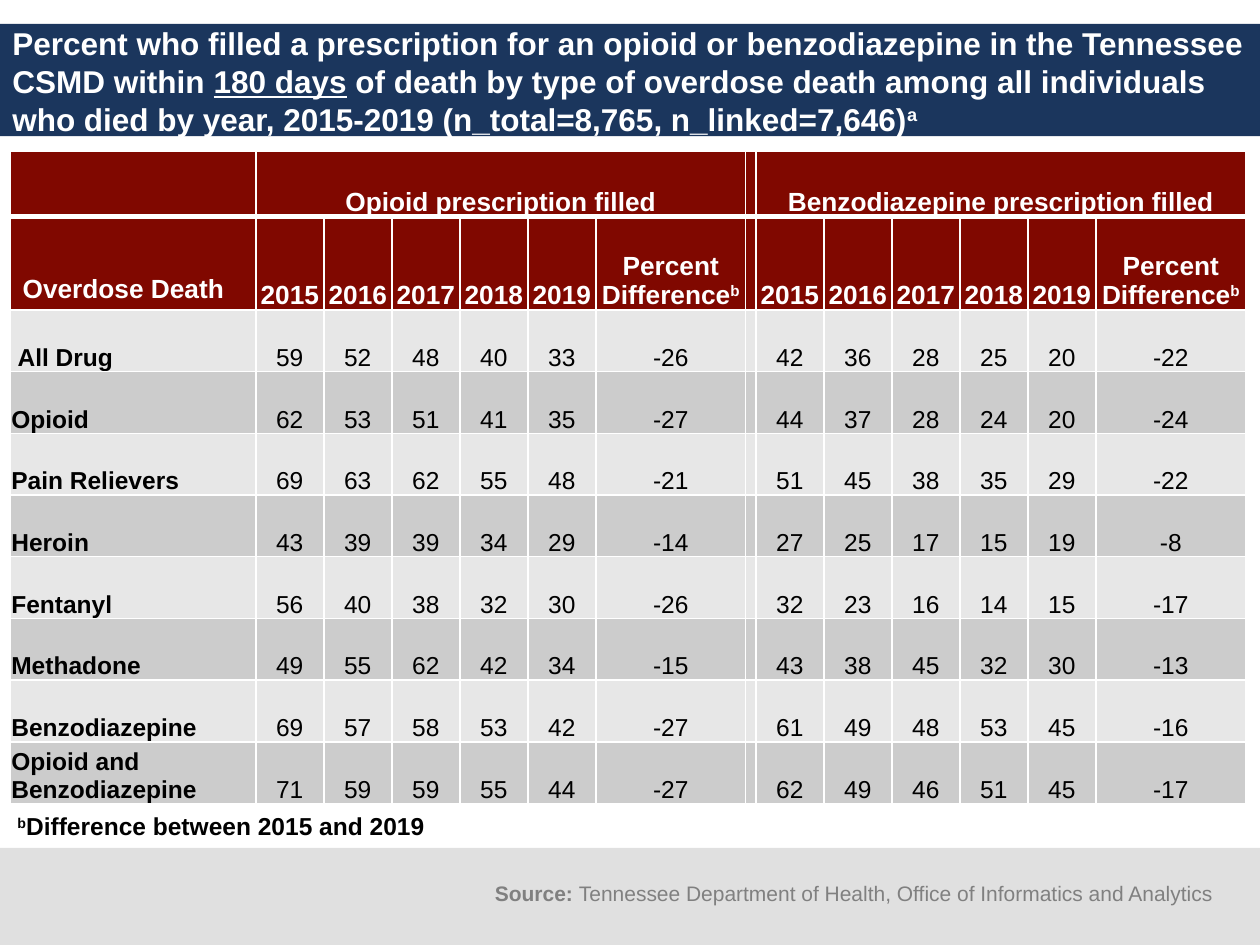
from lxml.etree import SubElement as Sub
from pptx import Presentation
from pptx.dml.color import RGBColor as Rgb
from pptx.enum.shapes import MSO_SHAPE as Shape
from pptx.enum.text import MSO_ANCHOR as Anchor, PP_ALIGN as Align
from pptx.oxml.ns import qn
from pptx.util import Inches, Pt

NAVY, RED, WHITE, BLACK = "1B365D", "800800", "FFFFFF", "000000"
PALE, MID, GREY = "E7E7E7", "CCCCCC", "808080"

TITLE = [
    ("Percent who filled a prescription for an opioid or benzodiazepine in the Tennessee CSMD within ", ""),
    ("180 days", "under"),
    (" of death by type of overdose death among all individuals who died by year, 2015-2019 (n_total=8,765, n_linked=7,646)", ""),
    ("a", "super"),
]
NOTE = [("b", "super"), ("Difference between 2015 and 2019", "")]
SOURCE = [("Source: ", "bold"), ("Tennessee Department of Health, Office of Informatics and Analytics", "")]
GROUPS = ["Opioid prescription filled", "Benzodiazepine prescription filled"]
HEADS = ["2015", "2016", "2017", "2018", "2019", [("Percent Difference", ""), ("b", "super")]]
DEATHS = [
    ("All Drug", [59, 52, 48, 40, 33, -26], [42, 36, 28, 25, 20, -22]),
    ("Opioid", [62, 53, 51, 41, 35, -27], [44, 37, 28, 24, 20, -24]),
    ("Pain Relievers", [69, 63, 62, 55, 48, -21], [51, 45, 38, 35, 29, -22]),
    ("Heroin", [43, 39, 39, 34, 29, -14], [27, 25, 17, 15, 19, -8]),
    ("Fentanyl", [56, 40, 38, 32, 30, -26], [32, 23, 16, 14, 15, -17]),
    ("Methadone", [49, 55, 62, 42, 34, -15], [43, 38, 45, 32, 30, -13]),
    ("Benzodiazepine", [69, 57, 58, 53, 42, -27], [61, 49, 48, 53, 45, -16]),
    ("Opioid and Benzodiazepine", [71, 59, 59, 55, 44, -27], [62, 49, 46, 51, 45, -17]),
]
SPAN = [0.54] * 5 + [1.19]
COLS = [1.95] + SPAN + [0.08] + SPAN
ROWS = [0.52, 0.74] + [0.49] * len(DEATHS)


def write(frame, text, size=14, color=BLACK, bold=False, align=Align.LEFT):
    para = frame.paragraphs[0]
    para.alignment = align
    for part, style in [(text, "")] if isinstance(text, str) else text:
        run = para.add_run()
        run.text = part
        font = run.font
        font.name, font.size = "Arial", Pt(size)
        font.bold = bold or style == "bold"
        font.color.rgb = Rgb.from_string(color)
        if style == "under":
            font.underline = True
        if style == "super":
            run._r.get_or_add_rPr().set("baseline", "30000")


def band(slide, top, high, color):
    bar = slide.shapes.add_shape(Shape.RECTANGLE, 0, Inches(top), Inches(10), Inches(high))
    bar.shadow.inherit = False
    bar.fill.solid()
    bar.fill.fore_color.rgb = Rgb.from_string(color)
    bar.line.fill.background()


def label(slide, box, text, wrap=True, anchor=Anchor.TOP, **form):
    frame = slide.shapes.add_textbox(*map(Inches, box)).text_frame
    frame.word_wrap = wrap
    frame.vertical_anchor = anchor
    write(frame, text, **form)


def dress(cell, color, above, below):
    props = cell._tc.get_or_add_tcPr()
    for side, width in zip("LRTB", (1, 1, above, below)):
        line = Sub(props, qn("a:ln" + side), w=str(Pt(width)))
        Sub(Sub(line, qn("a:solidFill")), qn("a:srgbClr"), val=WHITE)
    cell.fill.solid()
    cell.fill.fore_color.rgb = Rgb.from_string(color)
    cell.vertical_anchor = Anchor.BOTTOM
    cell.margin_left = cell.margin_right = cell.margin_top = Inches(0.01)
    cell.margin_bottom = 0


def chart_rows(slide):
    shape = slide.shapes.add_table(len(ROWS), len(COLS), Inches(0.08), Inches(1.2),
                                   Inches(sum(COLS)), Inches(sum(ROWS)))
    table = shape.table
    table.first_row = table.horz_banding = False
    for col, width in zip(table.columns, COLS):
        col.width = Inches(width)
    for row, high in zip(table.rows, ROWS):
        row.height = Inches(high)

    blank = [""] * 5
    lines = [["", GROUPS[0], *blank, "", GROUPS[1], *blank],
             ["Overdose Death", *HEADS, "", *HEADS]]
    lines += [[name, *map(str, left), "", *map(str, right)] for name, left, right in DEATHS]
    for r, line in enumerate(lines):
        head = r < 2
        fill = RED if head else (PALE, MID)[r % 2]
        for c, text in enumerate(line):
            cell = table.cell(r, c)
            dress(cell, fill, 3 if r == 1 else 1, 3 if r == 0 else 1)
            if text:
                write(cell.text_frame, text, size=15 if head else 14,
                      color=WHITE if head else BLACK, bold=head or c == 0,
                      align=Align.CENTER if c else Align.LEFT)
    for c in (1, 8):
        table.cell(0, c).merge(table.cell(0, c + 5))
    corner = table.cell(1, 0)
    corner.margin_left, corner.margin_bottom = Inches(0.1), Inches(0.05)
    table.cell(2, 0).margin_left = Inches(0.06)


def main():
    deck = Presentation()
    deck.slide_width, deck.slide_height = Inches(10), Inches(7.5)
    slide = deck.slides.add_slide(deck.slide_layouts[6])
    band(slide, 0.19, 0.89, NAVY)
    band(slide, 6.73, 0.77, "E0E0E0")
    label(slide, (0, 0.19, 10, 0.9), TITLE, anchor=Anchor.MIDDLE, size=18, color=WHITE, bold=True)
    label(slide, (0.04, 6.39, 3.46, 0.34), NOTE, wrap=False, bold=True)
    chart_rows(slide)
    label(slide, (3.83, 6.94, 6, 0.3), SOURCE, size=12, color=GREY)
    deck.save("out.pptx")


if __name__ == "__main__":
    main()
